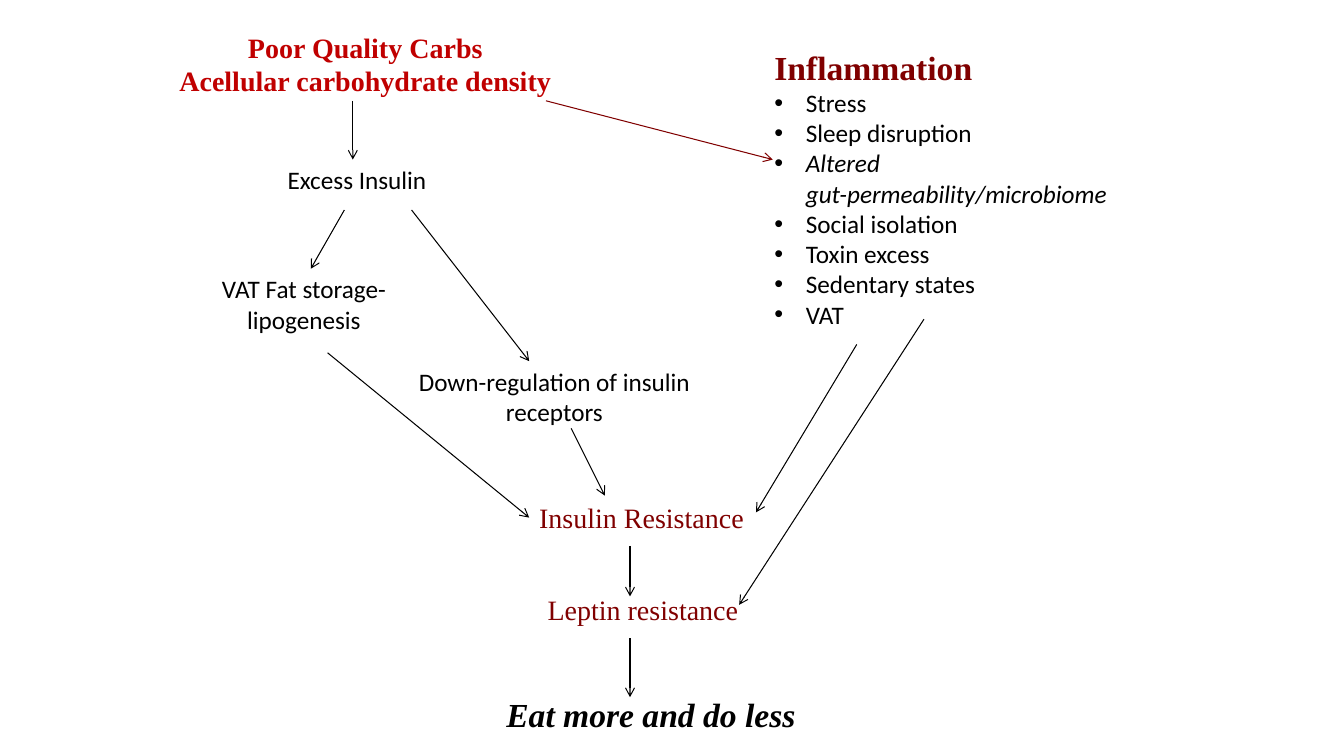
from dataclasses import dataclass

from lxml.etree import SubElement
from pptx import Presentation
from pptx.dml.color import RGBColor as Rgb
from pptx.enum.shapes import MSO_CONNECTOR as Connector
from pptx.enum.text import MSO_AUTO_SIZE as AutoSize, PP_ALIGN as Align
from pptx.oxml.ns import qn
from pptx.util import Pt


@dataclass(frozen=True)
class TextStyle:
    font: str
    size: int
    color: Rgb
    bold: bool = False
    italic: bool = False


class Theme:
    black = Rgb(0, 0, 0)
    red = Rgb(0xC0, 0, 0)
    maroon = Rgb(0x80, 0, 0)
    serif, sans = "Times New Roman", "Calibri"
    cause = TextStyle(serif, 20, red, bold=True)
    heading = TextStyle(serif, 24, maroon, bold=True)
    step = TextStyle(sans, 18, black)
    emphasis = TextStyle(sans, 18, black, italic=True)
    resistance = TextStyle(serif, 20, maroon)
    outcome = TextStyle(serif, 24, black, bold=True, italic=True)
    line_width = 0.75
    bullet_indent = 22.5


class Diagram:
    def __init__(self, slide, theme):
        self.slide = slide
        self.theme = theme

    def text(self, area, lines, align=Align.CENTER):
        """Place (words, style, bulleted) lines in a box at left, top, width, height."""
        box = self.slide.shapes.add_textbox(*map(Pt, area))
        frame = box.text_frame
        frame.word_wrap = True
        frame.auto_size = AutoSize.SHAPE_TO_FIT_TEXT
        for index, (words, style, bulleted) in enumerate(lines):
            para = frame.add_paragraph() if index else frame.paragraphs[0]
            para.alignment = align
            if bulleted:
                self.bullet(para)
            self.span(para, words, style)
        return box

    def span(self, para, words, style):
        span = para.add_run()
        span.text = words
        font = span.font
        font.name, font.size = style.font, Pt(style.size)
        font.bold, font.italic = style.bold, style.italic
        font.color.rgb = style.color

    def bullet(self, para):
        indent = Pt(self.theme.bullet_indent)
        properties = para._p.get_or_add_pPr()
        properties.set("marL", str(indent))
        properties.set("indent", str(-indent))
        SubElement(properties, qn("a:buFont"), typeface="Arial")
        SubElement(properties, qn("a:buChar"), char="•")

    def arrow(self, start, end, color=None):
        line = self.slide.shapes.add_connector(
            Connector.STRAIGHT, *map(Pt, (*start, *end)))
        line.line.color.rgb = color or self.theme.black
        line.line.width = Pt(self.theme.line_width)
        SubElement(line.line._get_or_add_ln(), qn("a:tailEnd"), type="arrow")
        SubElement(line._element.spPr, qn("a:effectLst"))
        return line


def main():
    deck = Presentation()
    deck.slide_width, deck.slide_height = Pt(960), Pt(540)
    page = deck.slides.add_slide(deck.slide_layouts[6])
    theme = Theme()
    diagram = Diagram(page, theme)

    diagram.text((120, 18, 282, 55.5), [
        ("Poor Quality Carbs", theme.cause, False),
        ("Acellular carbohydrate density", theme.cause, False)])

    steps = [
        ("Excess Insulin", (174, 114, 162, 29)),
        ("Down-regulation of insulin receptors", (282, 258, 228, 51)),
        ("VAT Fat storage-lipogenesis", (122.4, 192, 189.4, 51)),
    ]
    for words, area in steps:
        diagram.text(area, [(words, theme.step, False)])

    factors = [
        ("Stress", theme.step),
        ("Sleep disruption", theme.step),
        ("Altered gut-permeability/microbiome", theme.emphasis),
        ("Social isolation", theme.step),
        ("Toxin excess", theme.step),
        ("Sedentary states", theme.step),
        ("VAT", theme.step),
    ]
    diagram.text(
        (546, 30, 264, 211),
        [("Inflammation", theme.heading, False)]
        + [(words, style, True) for words, style in factors],
        Align.LEFT)

    insulin_resistance = diagram.text(
        (378, 354, 180, 31.5),
        [("Insulin Resistance", theme.resistance, False)], Align.LEFT)
    diagram.text(
        (384, 420, 192, 31.5),
        [("Leptin resistance", theme.resistance, False)], Align.LEFT)
    diagram.text((312, 492, 306, 36),
                 [("Eat more and do less", theme.outcome, False)])

    arrows = [
        ((252, 72), (252, 114)),
        ((246, 150), (222, 192)),
        ((408, 306), (432, 354)),
        ((612, 246), (540, 366)),
        ((450, 390), (450, 426)),
        ((450, 456), (450, 498)),
        ((294, 150), (378, 258)),
        ((660, 228), (528, 432)),
    ]
    for start, end in arrows:
        diagram.arrow(start, end)
    diagram.arrow((390, 72), (552, 114), theme.maroon)
    fat_to_resistance = diagram.arrow((234, 252), (378, 369.75))
    fat_to_resistance.end_connect(insulin_resistance, 1)

    deck.save("out.pptx")


if __name__ == "__main__":
    main()
